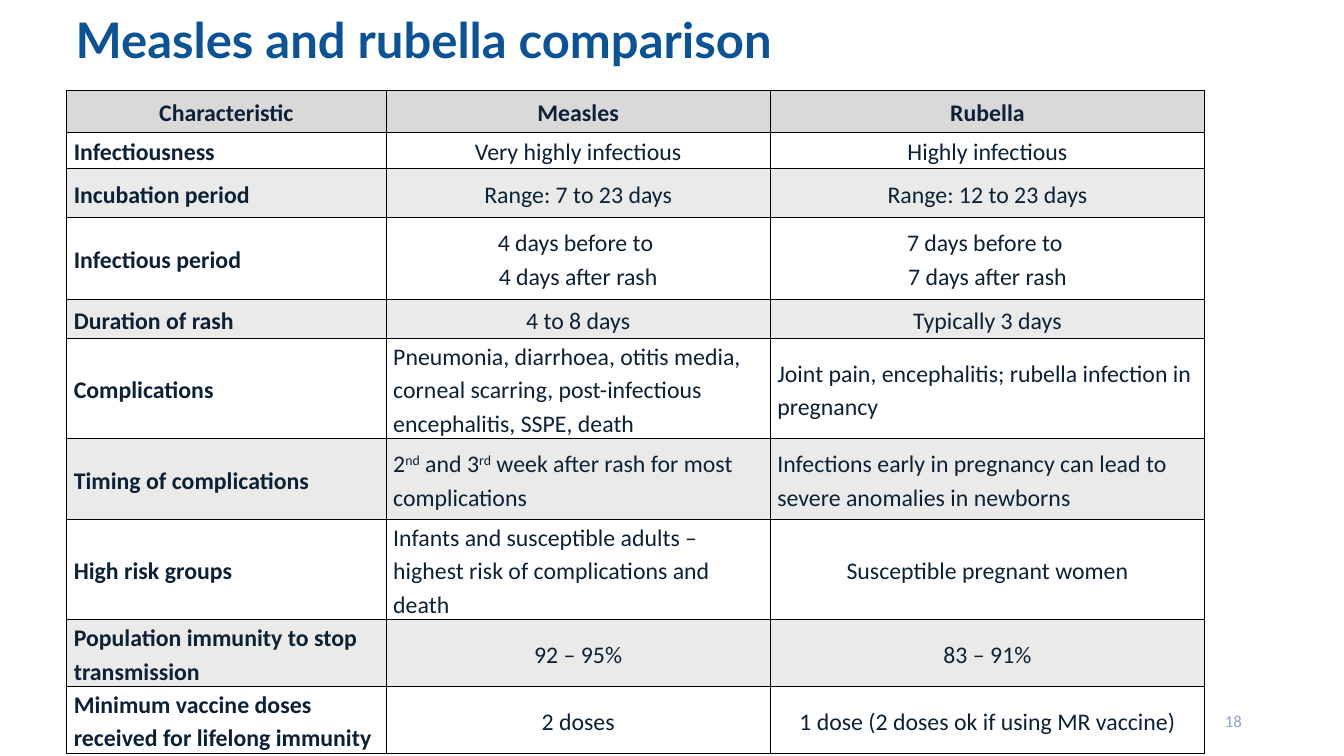
"""Build a slide with a table that compares measles and rubella."""
from dataclasses import dataclass

from lxml import etree
from pptx import Presentation
from pptx.dml.color import RGBColor
from pptx.enum.text import MSO_ANCHOR, PP_ALIGN
from pptx.oxml.ns import qn
from pptx.util import Cm, Pt

MIDDLE = MSO_ANCHOR.MIDDLE
LEFT, CENTER, RIGHT = PP_ALIGN.LEFT, PP_ALIGN.CENTER, PP_ALIGN.RIGHT


@dataclass(frozen=True)
class Theme:
    title_font: str = "Lato"
    body_font: str = "Calibri"
    title_size: int = 35
    body_size: int = 17
    number_size: int = 12
    title: str = "0B5394"
    text: str = "0C2036"
    number: str = "8CA4D2"
    header: str = "D9D9D9"
    band: str = "EAEAEA"
    plain: str = "FFFFFF"
    border: str = "000000"


THEME = Theme()
LONGEST_CENTERED = 45

COLUMN_WIDTHS = [8.05, 9.68, 10.95]
ROWS = [
    (1.04, "Characteristic", "Measles", "Rubella"),
    (0.91, "Infectiousness", "Very highly infectious", "Highly infectious"),
    (1.24, "Incubation period", "Range: 7 to 23 days", "Range: 12 to 23 days"),
    (2.06, "Infectious period", "4 days before to \n4 days after rash",
     "7 days before to \n7 days after rash"),
    (0.99, "Duration of rash", "4 to 8 days", "Typically 3 days"),
    (2.03, "Complications",
     "Pneumonia, diarrhoea, otitis media, corneal scarring, post-infectious encephalitis, SSPE, death",
     "Joint pain, encephalitis; rubella infection in pregnancy"),
    (2.03, "Timing of complications",
     "2^nd^ and 3^rd^ week after rash for most complications",
     "Infections early in pregnancy can lead to severe anomalies in newborns"),
    (2.03, "High risk groups",
     "Infants and susceptible adults – highest risk of complications and death",
     "Susceptible pregnant women"),
    (1.37, "Population immunity to stop transmission", "92 – 95%", "83 – 91%"),
    (1.37, "Minimum vaccine doses received for lifelong immunity", "2 doses",
     "1 dose (2 doses ok if using MR vaccine)"),
]


def add_run(paragraph, text, font, size, color, bold=False):
    run = paragraph.add_run()
    run.text = text
    run.font.name = font
    run.font.size = Pt(size)
    run.font.bold = bold
    run.font.color.rgb = RGBColor.from_string(color)
    return run


def add_borders(cell):
    properties = cell._tc.get_or_add_tcPr()
    for side in ("a:lnL", "a:lnR", "a:lnT", "a:lnB"):
        line = etree.SubElement(properties, qn(side), w=str(Pt(1)))
        fill = etree.SubElement(line, qn("a:solidFill"))
        etree.SubElement(fill, qn("a:srgbClr"), val=THEME.border)


presentation = Presentation()
presentation.slide_width = Cm(33.87)
presentation.slide_height = Cm(19.05)
slide = presentation.slides.add_slide(presentation.slide_layouts[5])

heading = slide.shapes.title
heading.left, heading.top = Cm(1.65), Cm(0.18)
heading.width, heading.height = Cm(29.21), Cm(1.78)
heading.text_frame.vertical_anchor = MIDDLE
heading_line = heading.text_frame.paragraphs[0]
heading_line.alignment = LEFT
heading_line.line_spacing = 0.9
add_run(heading_line, "Measles and rubella comparison",
        THEME.title_font, THEME.title_size, THEME.title, True)

comparison = slide.shapes.add_table(
    len(ROWS), len(COLUMN_WIDTHS), Cm(1.68), Cm(2.29),
    Cm(sum(COLUMN_WIDTHS)), Cm(sum(row[0] for row in ROWS))).table
comparison.horz_banding = False
for column, width in zip(comparison.columns, COLUMN_WIDTHS):
    column.width = Cm(width)

for row_index, (height, *entries) in enumerate(ROWS):
    comparison.rows[row_index].height = Cm(height)
    is_header = row_index == 0
    shade = THEME.header if is_header else THEME.plain if row_index % 2 else THEME.band
    for column_index, entry in enumerate(entries):
        is_label = column_index == 0
        cell = comparison.cell(row_index, column_index)
        add_borders(cell)
        cell.fill.solid()
        cell.fill.fore_color.rgb = RGBColor.from_string(shade)
        cell.vertical_anchor = MIDDLE
        cell.margin_left = cell.margin_right = Cm(0.18)
        cell.margin_top = cell.margin_bottom = 0
        is_centered = is_header or not is_label and len(entry) < LONGEST_CENTERED
        for line_index, line in enumerate(entry.split("\n")):
            frame = cell.text_frame
            paragraph = frame.add_paragraph() if line_index else frame.paragraphs[0]
            paragraph.alignment = CENTER if is_centered else LEFT
            paragraph.line_spacing = 1.15
            for part_index, part in enumerate(line.split("^")):
                run = add_run(paragraph, part, THEME.body_font, THEME.body_size,
                              THEME.text, is_header or is_label)
                if part_index % 2:
                    run._r.get_or_add_rPr().set("baseline", "30000")

page_number = slide.shapes.add_textbox(Cm(23.93), Cm(17.65), Cm(7.62), Cm(1.02)).text_frame
page_number.word_wrap = True
page_number.vertical_anchor = MIDDLE
page_number.paragraphs[0].alignment = RIGHT
add_run(page_number.paragraphs[0], "18", THEME.body_font, THEME.number_size, THEME.number)

presentation.save("out.pptx")
